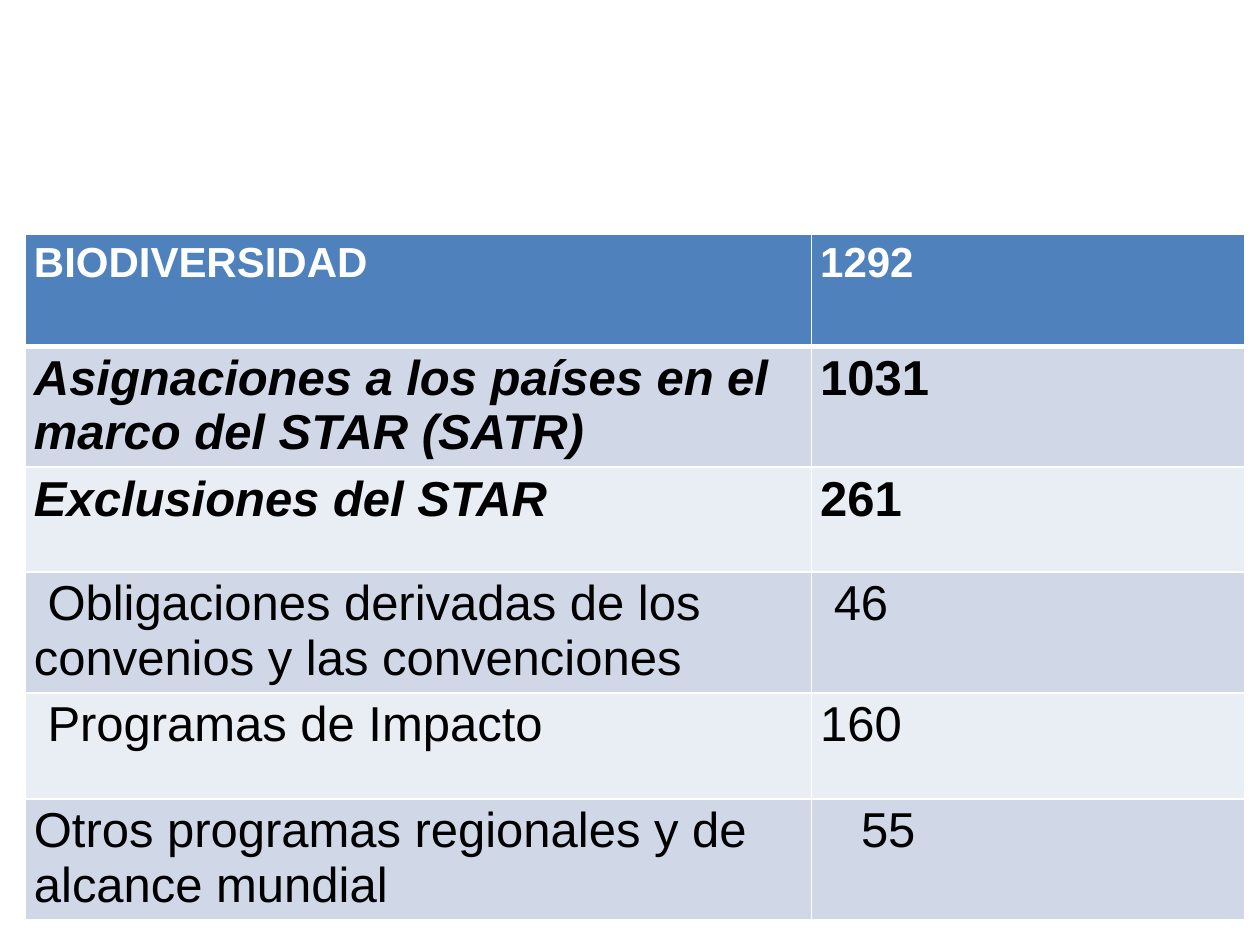
from dataclasses import dataclass

from lxml import etree
from pptx import Presentation
from pptx.dml.color import RGBColor
from pptx.enum.text import MSO_ANCHOR, PP_ALIGN
from pptx.oxml.ns import qn
from pptx.util import Pt

TOP = MSO_ANCHOR.TOP
LEFT = PP_ALIGN.LEFT

WHITE = RGBColor(0xFF, 0xFF, 0xFF)
BLACK = RGBColor(0x00, 0x00, 0x00)
HEADER_BLUE = RGBColor(0x4F, 0x81, 0xBD)
BAND_FILLS = (RGBColor(0xD0, 0xD8, 0xE8), RGBColor(0xE9, 0xED, 0xF4))

BLANK_LAYOUT = 6
TABLE_LEFT, TABLE_TOP = 14.4, 134
COLUMN_WIDTHS = (449.3, 247.7)
SPACE_WIDTH = 7.78  # one space at 28 pt
CELL_FORMAT = {
    "margin_left": Pt(5),
    "margin_right": Pt(5),
    "margin_top": Pt(2.6),
    "margin_bottom": Pt(2.6),
    "vertical_anchor": TOP,
}


@dataclass(frozen=True)
class BudgetRow:
    label: str
    amount: str
    height: float
    bold: bool = False
    italic_label: bool = False
    label_indent: float = 0
    amount_indent: float = 0


ROWS = (
    BudgetRow("BIODIVERSIDAD", "1292", 64, bold=True),
    BudgetRow("Asignaciones a los países en el marco del STAR (SATR)", "1031", 69,
              bold=True, italic_label=True),
    BudgetRow("Exclusiones del STAR", "261", 60, bold=True, italic_label=True),
    BudgetRow("Obligaciones derivadas de los convenios y las convenciones", "46", 69,
              label_indent=SPACE_WIDTH, amount_indent=SPACE_WIDTH),
    BudgetRow("Programas de Impacto", "160", 60.5, label_indent=SPACE_WIDTH),
    BudgetRow("Otros programas regionales y de alcance mundial", "55", 69,
              amount_indent=3 * SPACE_WIDTH),
)


def set_borders(cell, widths: dict[str, float]) -> None:
    """Give each side of a cell a white line; call before setting the fill."""
    properties = cell._tc.get_or_add_tcPr()
    for side, width in widths.items():
        line = etree.SubElement(properties, qn(f"a:ln{side}"), w=str(Pt(width)))
        fill = etree.SubElement(line, qn("a:solidFill"))
        etree.SubElement(fill, qn("a:srgbClr"), val=str(WHITE))


def write_cell(cell, text: str, indent: float, font_format: dict, color: RGBColor) -> None:
    for name, value in CELL_FORMAT.items():
        setattr(cell, name, value)
    paragraph = cell.text_frame.paragraphs[0]
    paragraph.alignment = LEFT
    if indent:
        paragraph._p.get_or_add_pPr().set("indent", str(Pt(indent)))
    run = paragraph.add_run()
    run.text = text
    for name, value in font_format.items():
        setattr(run.font, name, value)
    run.font.color.rgb = color


def fill_row(table, index: int, row: BudgetRow) -> None:
    is_header = index == 0
    table.rows[index].height = Pt(row.height)
    background = HEADER_BLUE if is_header else BAND_FILLS[(index - 1) % 2]
    borders = {"L": 1, "R": 1, "T": 3 if index == 1 else 1, "B": 3 if is_header else 1}
    contents = (
        (row.label, row.label_indent, row.italic_label),
        (row.amount, row.amount_indent, False),
    )
    for column, (text, indent, italic) in enumerate(contents):
        cell = table.cell(index, column)
        set_borders(cell, borders)
        cell.fill.solid()
        cell.fill.fore_color.rgb = background
        font_format = {"name": "Arial", "size": Pt(24 if is_header else 28),
                       "bold": row.bold, "italic": italic}
        write_cell(cell, text, indent, font_format, WHITE if is_header else BLACK)


def main() -> None:
    presentation = Presentation()
    presentation.slide_width, presentation.slide_height = Pt(720), Pt(540)
    slide = presentation.slides.add_slide(presentation.slide_layouts[BLANK_LAYOUT])

    # Budget table
    table = slide.shapes.add_table(
        len(ROWS), len(COLUMN_WIDTHS), Pt(TABLE_LEFT), Pt(TABLE_TOP),
        Pt(sum(COLUMN_WIDTHS)), Pt(sum(row.height for row in ROWS)),
    ).table
    for column, width in zip(table.columns, COLUMN_WIDTHS):
        column.width = Pt(width)
    for index, row in enumerate(ROWS):
        fill_row(table, index, row)

    presentation.save("out.pptx")


if __name__ == "__main__":
    main()
